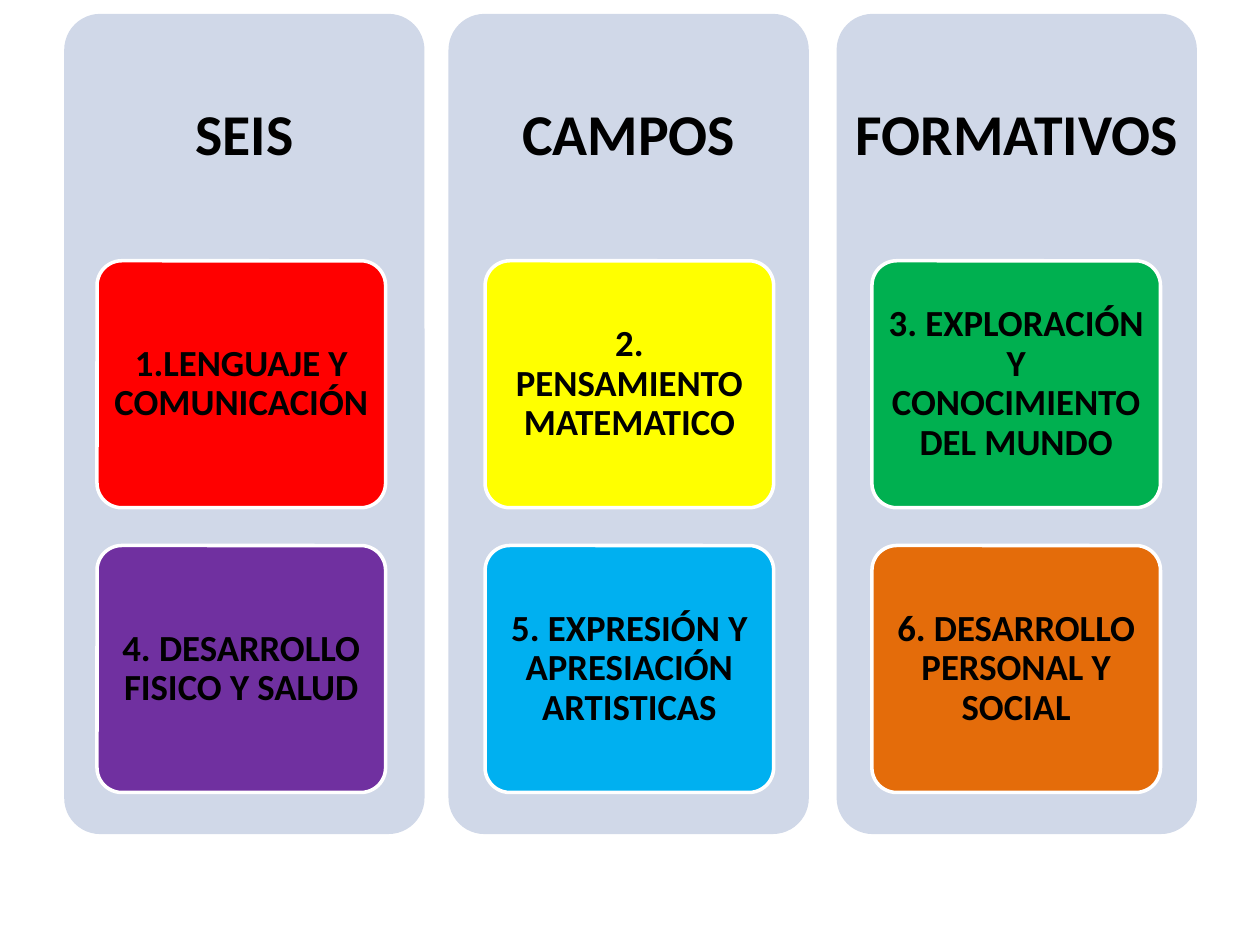
from pptx import Presentation
from pptx.dml.color import RGBColor
from pptx.enum.shapes import MSO_SHAPE
from pptx.enum.text import MSO_ANCHOR, PP_ALIGN
from pptx.util import Inches, Pt

COLORS = {
    "panel": "D0D8E8", "text": "000000", "border": "FFFFFF",
    "red": "FF0000", "yellow": "FFFF00", "green": "00B050",
    "purple": "7030A0", "blue": "00B0F0", "orange": "E46C0A",
}
PANEL_TOP, PANEL_W, PANEL_H = 0.11, 2.86, 6.51
HEADER_H = 1.95
CARD_TOP, CARD_W, CARD_H, CARD_STEP = 2.07, 2.29, 1.96, 2.26

# Heading, panel left, card left, cards from top to bottom
COLUMNS = [
    ("SEIS", 0.51, 0.77, [
        ("1.LENGUAJE Y COMUNICACIÓN", "red"),
        ("4. DESARROLLO FISICO Y SALUD", "purple")]),
    ("CAMPOS", 3.56, 3.85, [
        ("2. PENSAMIENTO MATEMATICO", "yellow"),
        ("5. EXPRESIÓN Y APRESIACIÓN ARTISTICAS", "blue")]),
    ("FORMATIVOS", 6.64, 6.92, [
        ("3. EXPLORACIÓN Y CONOCIMIENTO DEL MUNDO", "green"),
        ("6. DESARROLLO PERSONAL Y SOCIAL", "orange")]),
]


class SlideBuilder:
    """Holds the current slide and its shared text style."""

    font_name = "Calibri"

    def __init__(self, slide):
        self.slide = slide

    def color(self, name):
        return RGBColor.from_string(COLORS[name])

    def set_text(self, sp, text, size, inset_x, inset_y):
        tf = sp.text_frame
        tf.word_wrap = True
        tf.vertical_anchor = MSO_ANCHOR.MIDDLE
        tf.margin_left = tf.margin_right = Inches(inset_x)
        tf.margin_top = tf.margin_bottom = Inches(inset_y)
        p = tf.paragraphs[0]
        p.text = text
        p.alignment = PP_ALIGN.CENTER
        p.line_spacing = 0.9
        p.font.name = self.font_name
        p.font.size = Pt(size)
        p.font.bold = True
        p.font.color.rgb = self.color("text")

    def rounded(self, left, top, width, height, fill):
        sp = self.slide.shapes.add_shape(
            MSO_SHAPE.ROUNDED_RECTANGLE,
            Inches(left), Inches(top), Inches(width), Inches(height))
        sp.adjustments[0] = 0.1
        sp.shadow.inherit = False
        sp.fill.solid()
        sp.fill.fore_color.rgb = self.color(fill)
        return sp

    def panel(self, left):
        sp = self.rounded(left, PANEL_TOP, PANEL_W, PANEL_H, "panel")
        sp.line.fill.background()

    def header(self, left, text):
        sp = self.slide.shapes.add_textbox(
            Inches(left), Inches(PANEL_TOP), Inches(PANEL_W), Inches(HEADER_H))
        self.set_text(sp, text, 33, 0.14, 0.14)

    def card(self, left, top, text, fill):
        sp = self.rounded(left, top, CARD_W, CARD_H, fill)
        sp.line.color.rgb = self.color("border")
        sp.line.width = Pt(2)
        self.set_text(sp, text, 21, 0.06, 0.04)


def main():
    prs = Presentation()
    prs.slide_width, prs.slide_height = Inches(10), Inches(7.5)
    builder = SlideBuilder(prs.slides.add_slide(prs.slide_layouts[6]))
    for heading, panel_left, card_left, cards in COLUMNS:
        builder.panel(panel_left)
        builder.header(panel_left, heading)
        for row, (text, fill) in enumerate(cards):
            builder.card(card_left, CARD_TOP + row * CARD_STEP, text, fill)
    prs.save("out.pptx")


if __name__ == "__main__":
    main()
